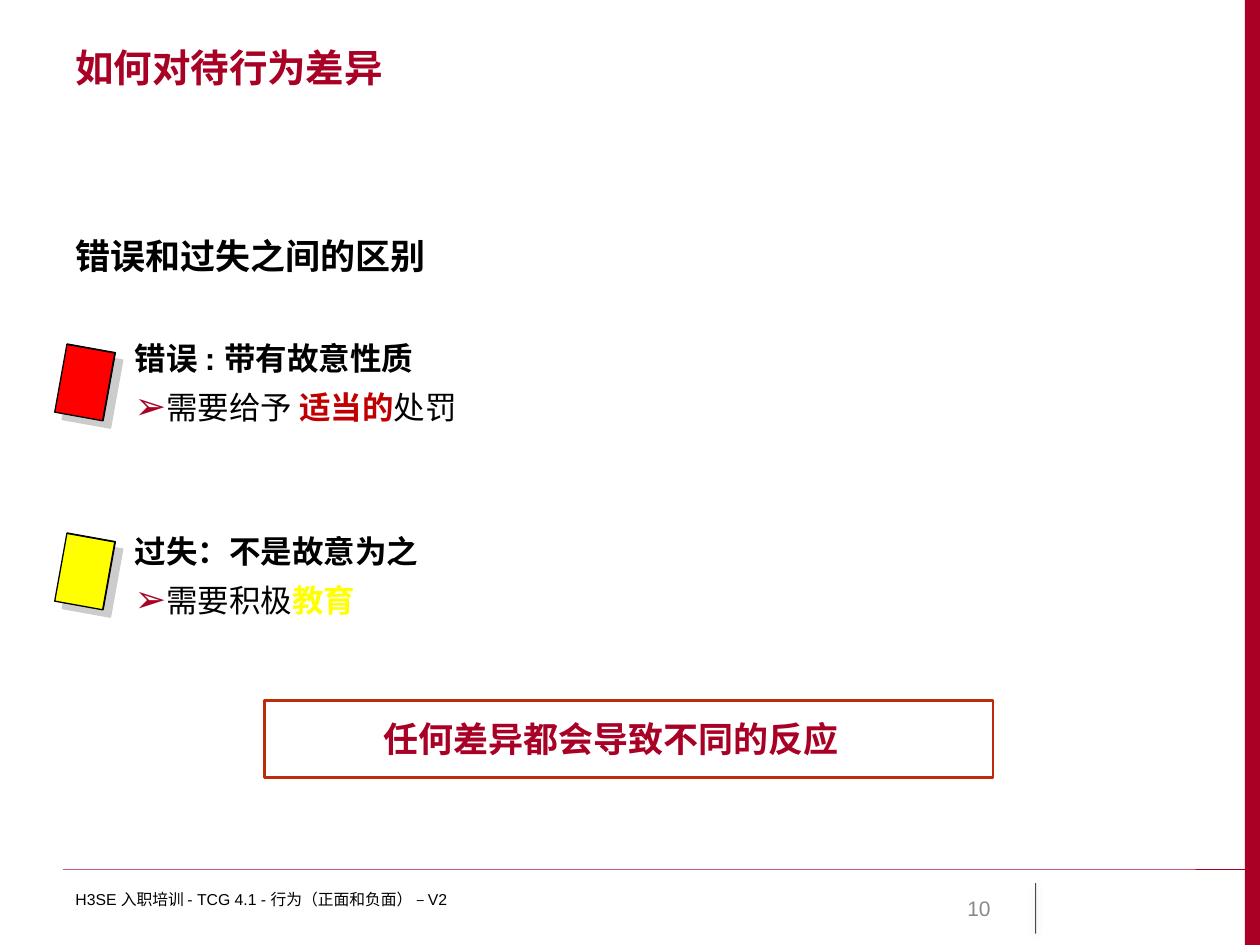
from dataclasses import dataclass

from lxml.etree import SubElement
from pptx import Presentation
from pptx.dml.color import RGBColor
from pptx.enum.shapes import MSO_CONNECTOR, MSO_SHAPE
from pptx.enum.text import MSO_ANCHOR, PP_ALIGN
from pptx.oxml.ns import qn
from pptx.util import Inches, Pt

BLACK = RGBColor(0x00, 0x00, 0x00)
WHITE = RGBColor(0xFF, 0xFF, 0xFF)
CRIMSON = RGBColor(0xAA, 0x00, 0x25)
TITLE_RED = RGBColor(0xA9, 0x00, 0x25)
DARK_RED = RGBColor(0xC0, 0x00, 0x00)
FRAME_RED = RGBColor(0xBD, 0x2B, 0x0B)
RED = RGBColor(0xFF, 0x00, 0x00)
YELLOW = RGBColor(0xFF, 0xFF, 0x00)
GRAY = RGBColor(0x80, 0x80, 0x80)
NUMBER_GRAY = RGBColor(0x89, 0x89, 0x89)


@dataclass
class Run:
    text: str
    size: float = 18
    color: RGBColor = BLACK
    bold: bool = False


@dataclass
class Para:
    runs: list[Run]
    before: float = 0
    after: float = 0
    indent: float = 0
    bullet: bool = False
    align: PP_ALIGN = PP_ALIGN.LEFT


@dataclass
class Shadow:
    color: RGBColor
    alpha: int
    blur: float
    dist: float
    angle: int


def add_effects(sp, shadow: Shadow | None = None) -> None:
    """Replace the theme shadow by the given one, or by none."""
    effects = SubElement(sp._element.spPr, qn("a:effectLst"))
    if shadow:
        outer = SubElement(effects, qn("a:outerShdw"), {
            "blurRad": str(Pt(shadow.blur)), "dist": str(Pt(shadow.dist)),
            "dir": str(shadow.angle * 60000), "algn": "ctr", "rotWithShape": "0"})
        color = SubElement(outer, qn("a:srgbClr"), val=str(shadow.color))
        SubElement(color, qn("a:alpha"), val=str(shadow.alpha * 1000))


def add_arrow_bullet(p) -> None:
    pPr = p._p.get_or_add_pPr()
    color = SubElement(pPr, qn("a:buClr"))
    SubElement(color, qn("a:srgbClr"), val=str(TITLE_RED))
    SubElement(pPr, qn("a:buSzPct"), val="120000")
    SubElement(pPr, qn("a:buFont"), typeface="Arial")
    SubElement(pPr, qn("a:buChar"), char="➢")


def write(sp, paras: list[Para], **frame) -> None:
    tf = sp.text_frame
    for name, value in {"word_wrap": True, "vertical_anchor": MSO_ANCHOR.TOP, **frame}.items():
        setattr(tf, name, value)
    for i, para in enumerate(paras):
        p = tf.add_paragraph() if i else tf.paragraphs[0]
        layout = {"alignment": para.align, "space_before": Pt(para.before),
                  "space_after": Pt(para.after)}
        for name, value in layout.items():
            setattr(p, name, value)
        if para.indent:
            pPr = p._p.get_or_add_pPr()
            pPr.set("marL", str(Inches(para.indent)))
            pPr.set("indent", "0")
        if para.bullet:
            add_arrow_bullet(p)
        for run in para.runs:
            r = p.add_run()
            r.text = run.text
            r.font.color.rgb = run.color
            style = {"name": "Arial", "size": Pt(run.size), "bold": run.bold}
            for name, value in style.items():
                setattr(r.font, name, value)


def add_text(s, x: float, y: float, w: float, h: float, paras: list[Para], **frame):
    sp = s.shapes.add_textbox(Inches(x), Inches(y), Inches(w), Inches(h))
    write(sp, paras, **frame)
    return sp


def add_box(s, kind: MSO_SHAPE, x: float, y: float, w: float, h: float, fill: RGBColor,
            line: RGBColor | None = None, width: float = 0.75, shadow: Shadow | None = None):
    sp = s.shapes.add_shape(kind, Inches(x), Inches(y), Inches(w), Inches(h))
    sp.fill.solid()
    sp.fill.fore_color.rgb = fill
    if line is None:
        sp.line.fill.background()
    else:
        sp.line.color.rgb = line
        sp.line.width = Pt(width)
    add_effects(sp, shadow)
    return sp


def add_line(s, x1: float, y1: float, x2: float, y2: float, color: RGBColor, width: float,
             shadow: Shadow | None = None):
    cn = s.shapes.add_connector(MSO_CONNECTOR.STRAIGHT, Inches(x1), Inches(y1),
                                Inches(x2), Inches(y2))
    cn.line.color.rgb = color
    cn.line.width = Pt(width)
    add_effects(cn, shadow)
    return cn


def add_card(s, y: float, color: RGBColor) -> None:
    card = add_box(s, MSO_SHAPE.CUBE, 0.48, y, 0.39, 0.55, color, BLACK,
                   shadow=Shadow(GRAY, 40, 0, 6, 45))
    card.adjustments[0] = 0.01
    card.rotation = 10.2


def topic(heading: str, before: float, advice: list[Run]) -> list[Para]:
    """A bold heading with one arrow point under it."""
    return [Para([Run(heading, bold=True)], before, 3, 0.47),
            Para(advice, 3, 3, 0.47, bullet=True)]


def main() -> None:
    prs = Presentation()
    prs.slide_width, prs.slide_height = Inches(10), Inches(7.5)
    s = prs.slides.add_slide(prs.slide_layouts[6])

    add_box(s, MSO_SHAPE.RECTANGLE, 9.88, 0, 0.12, 7.5, CRIMSON)
    add_line(s, 0.5, 6.9, 10, 6.9, CRIMSON, 0.75)
    divider = add_line(s, 8.22, 7.01, 8.22, 7.41, BLACK, 0.5, Shadow(BLACK, 38, 5, 1.6, 90))
    stroke = divider._element.spPr.find(".//" + qn("a:ln")).find(".//" + qn("a:srgbClr"))
    SubElement(stroke, qn("a:alpha"), val="70000")

    add_text(s, 0.5, 0.3, 8.99, 0.69, [Para([Run("如何对待行为差异", 22, TITLE_RED, True)])])

    body = add_text(s, 0.5, 1.39, 8.99, 5.51, [
        Para([Run("错误和过失之间的区别", 20, bold=True)], after=3),
        *topic("错误 : 带有故意性质", 33, [
            Run("需要给予 "), Run("适当的", color=DARK_RED, bold=True), Run("处罚")]),
        *topic("过失：不是故意为之", 58, [
            Run("需要积极"), Run("教育", color=YELLOW, bold=True)]),
    ], margin_top=Inches(0.47))
    body.fill.solid()
    body.fill.fore_color.rgb = WHITE

    for y, color in ((2.76, RED), (4.26, YELLOW)):
        add_card(s, y, color)

    conclusion = add_box(s, MSO_SHAPE.RECTANGLE, 2.1, 5.56, 5.78, 0.61, WHITE, FRAME_RED, 1.5)
    write(conclusion,
          [Para([Run("任何差异都会导致不同的反应", 20, TITLE_RED, True)], align=PP_ALIGN.CENTER)],
          vertical_anchor=MSO_ANCHOR.MIDDLE, margin_left=0, margin_top=0,
          margin_right=Inches(0.28), margin_bottom=0)

    add_text(s, 0.5, 7.01, 6.08, 0.4,
             [Para([Run("H3SE 入职培训 - TCG 4.1 - 行为（正面和负面） – V2", 9)])])
    add_text(s, 7.17, 7.01, 0.79, 0.4,
             [Para([Run("10", 12, NUMBER_GRAY)], align=PP_ALIGN.RIGHT)],
             vertical_anchor=MSO_ANCHOR.MIDDLE)

    prs.save("out.pptx")


if __name__ == "__main__":
    main()
